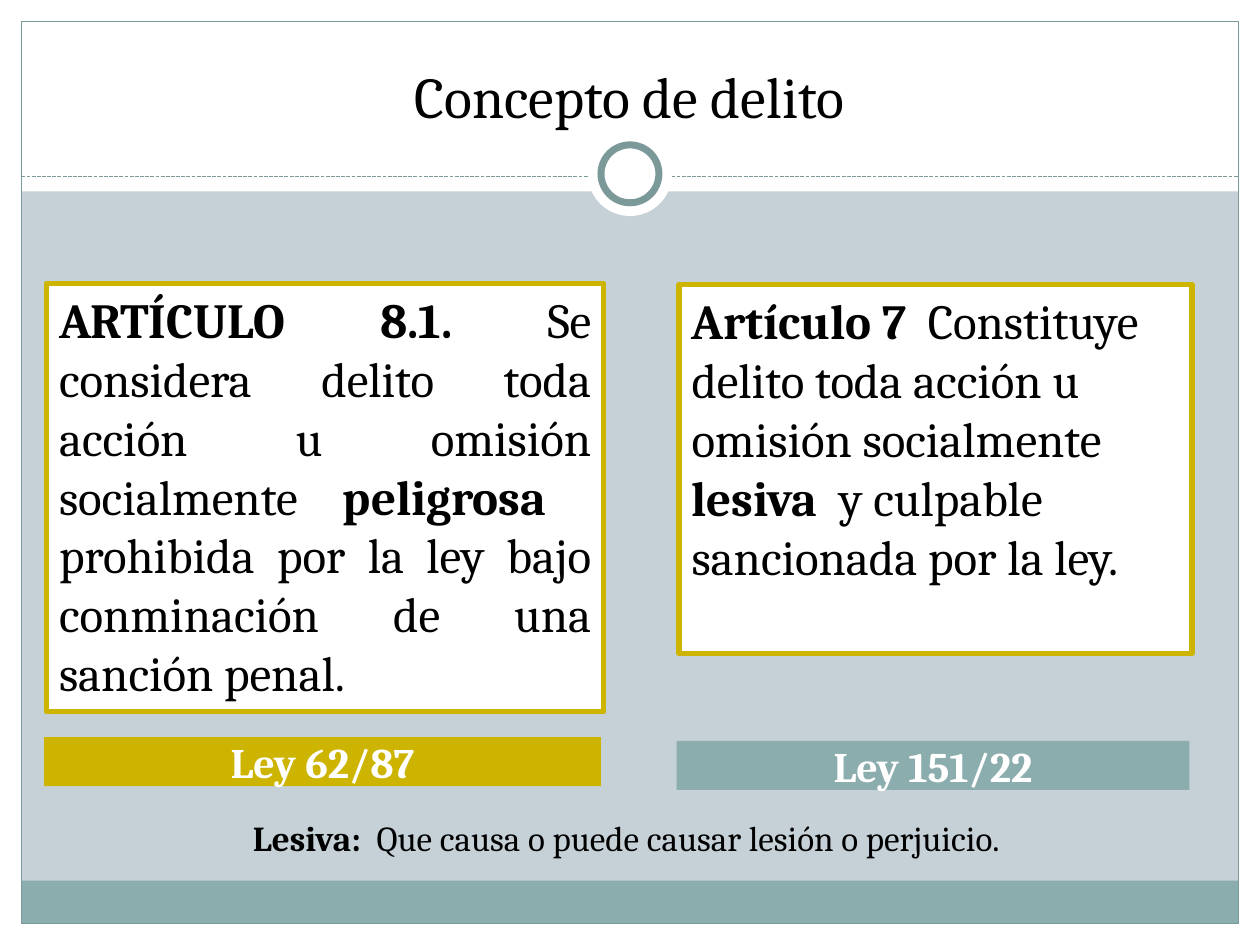
from pptx import Presentation
from pptx.dml.color import RGBColor
from pptx.enum.dml import MSO_LINE_DASH_STYLE as Dash
from pptx.enum.shapes import MSO_CONNECTOR as Connector, MSO_SHAPE as Shape
from pptx.enum.text import MSO_ANCHOR as Anchor, PP_ALIGN as Align
from pptx.oxml.ns import qn
from pptx.util import Inches, Pt

FONT = "Cambria"
WHITE, BLACK = "FFFFFF", "000000"
GOLD, TEAL, SLATE, MIST = "CCB400", "8CADAE", "7C999A", "C5D1D7"
PAGE_WIDTH, PAGE_HEIGHT, MARGIN = 10, 7.5, 0.17


def color(hex_value):
    return RGBColor.from_string(hex_value)


def add_block(page, box, fill=None, line=None, width=0.75, kind=Shape.RECTANGLE):
    block = page.shapes.add_shape(kind, *map(Inches, box))
    block.shadow.inherit = False
    if fill:
        block.fill.solid()
        block.fill.fore_color.rgb = color(fill)
    else:
        block.fill.background()
    if line:
        block.line.color.rgb = color(line)
        block.line.width = Pt(width)
    else:
        block.line.fill.background()
    return block


def write(shape, spans, size, ink=BLACK, align=Align.LEFT, anchor=Anchor.TOP):
    """Fill a shape with one paragraph of (text, bold) spans."""
    frame = shape.text_frame
    frame.word_wrap = True
    frame.vertical_anchor = anchor
    para = frame.paragraphs[0]
    para.alignment = align
    for text, bold in spans:
        span = para.add_run()
        span.text = text
        span.font.name = FONT
        span.font.size = Pt(size)
        span.font.bold = bold
        span.font.color.rgb = color(ink)


def add_text(page, box, spans, size, anchor=Anchor.TOP):
    text_box = page.shapes.add_textbox(*map(Inches, box))
    write(text_box, spans, size, align=Align.CENTER, anchor=anchor)


def add_frame(page, box):
    """White margins and header, footer band, outline, divider and ring."""
    left, top, width, height = box
    header, divider, footer = 1.52, 1.4, 0.34
    right, bottom = left + width, top + height
    inner = width - 2 * MARGIN

    # Margins and header
    add_block(page, (left, bottom - MARGIN, width, MARGIN), WHITE)
    add_block(page, (left, top, width, header), WHITE)
    for edge in (left, right - MARGIN):
        add_block(page, (edge, top, MARGIN, height), WHITE)

    # Footer band and outline
    add_block(page, (left + MARGIN, bottom - MARGIN - footer, inner, footer), TEAL)
    add_block(page, (left + MARGIN, top + MARGIN, inner, height - 2 * MARGIN), line=SLATE)

    # Dashed divider
    rule = page.shapes.add_connector(
        Connector.STRAIGHT, Inches(left + MARGIN), Inches(top + divider),
        Inches(right - MARGIN), Inches(top + divider))
    rule.line.color.rgb = color(SLATE)
    rule.line.width = Pt(0.75)
    rule.line.dash_style = Dash.SQUARE_DOT
    properties = rule._element.spPr
    properties.append(properties.makeelement(qn("a:effectLst"), {}))

    # Ring on the divider
    center_x, center_y = left + width / 2, top + 1.38
    for size, line in ((0.67, None), (0.46, SLATE)):
        add_block(page, (center_x - size / 2, center_y - size / 2, size, size),
                  WHITE, line, 4, Shape.OVAL)


def add_law(page, box, article_height, spans, align, label, label_color):
    """Framed article with the name of its law at the foot of the box."""
    left, top, width, height = box
    label_height, shift = 0.39, 0.02
    strip = add_block(page, (left, top + height - label_height, width, label_height),
                      label_color)
    write(strip, [(label, True)], 24, WHITE, Align.CENTER, Anchor.MIDDLE)
    strip.text_frame.paragraphs[0].space_before = Pt(4.8)
    article = add_block(page, (left + shift, top, width, article_height), WHITE, GOLD, 3)
    write(article, spans, 28, align=align)


def main():
    deck = Presentation()
    deck.slide_width, deck.slide_height = Inches(PAGE_WIDTH), Inches(PAGE_HEIGHT)
    page = deck.slides.add_slide(deck.slide_layouts[6])
    page.background.fill.solid()
    page.background.fill.fore_color.rgb = color(MIST)

    add_frame(page, (0, 0, PAGE_WIDTH, PAGE_HEIGHT))
    add_text(page, (0.33, 0.25, 9.33, 0.83), [("Concepto de delito", False)], 33,
             Anchor.BOTTOM)

    # Old and new law side by side
    add_law(page, (0.35, 2.25, 4.42, 3.99), 3.4, [
        ("ARTÍCULO 8.1. ", True),
        ("Se considera delito toda acción u omisión socialmente ", False),
        ("peligrosa ", True),
        (" prohibida por la ley bajo conminación de una sanción penal.", False),
    ], Align.JUSTIFY, "Ley 62/87", GOLD)
    add_law(page, (5.37, 2.26, 4.07, 4.01), 2.93, [
        ("Artículo 7  ", True),
        ("Constituye delito toda acción u omisión socialmente ", False),
        ("lesiva  ", True),
        ("y culpable sancionada por la ley.", False),
    ], Align.LEFT, "Ley 151/22", TEAL)

    # Definition
    add_text(page, (0, 6.43, PAGE_WIDTH, 0.44), [
        ("Lesiva:  ", True),
        ("Que causa o puede causar lesión o perjuicio. ", False),
    ], 20)

    deck.save("out.pptx")


if __name__ == "__main__":
    main()
